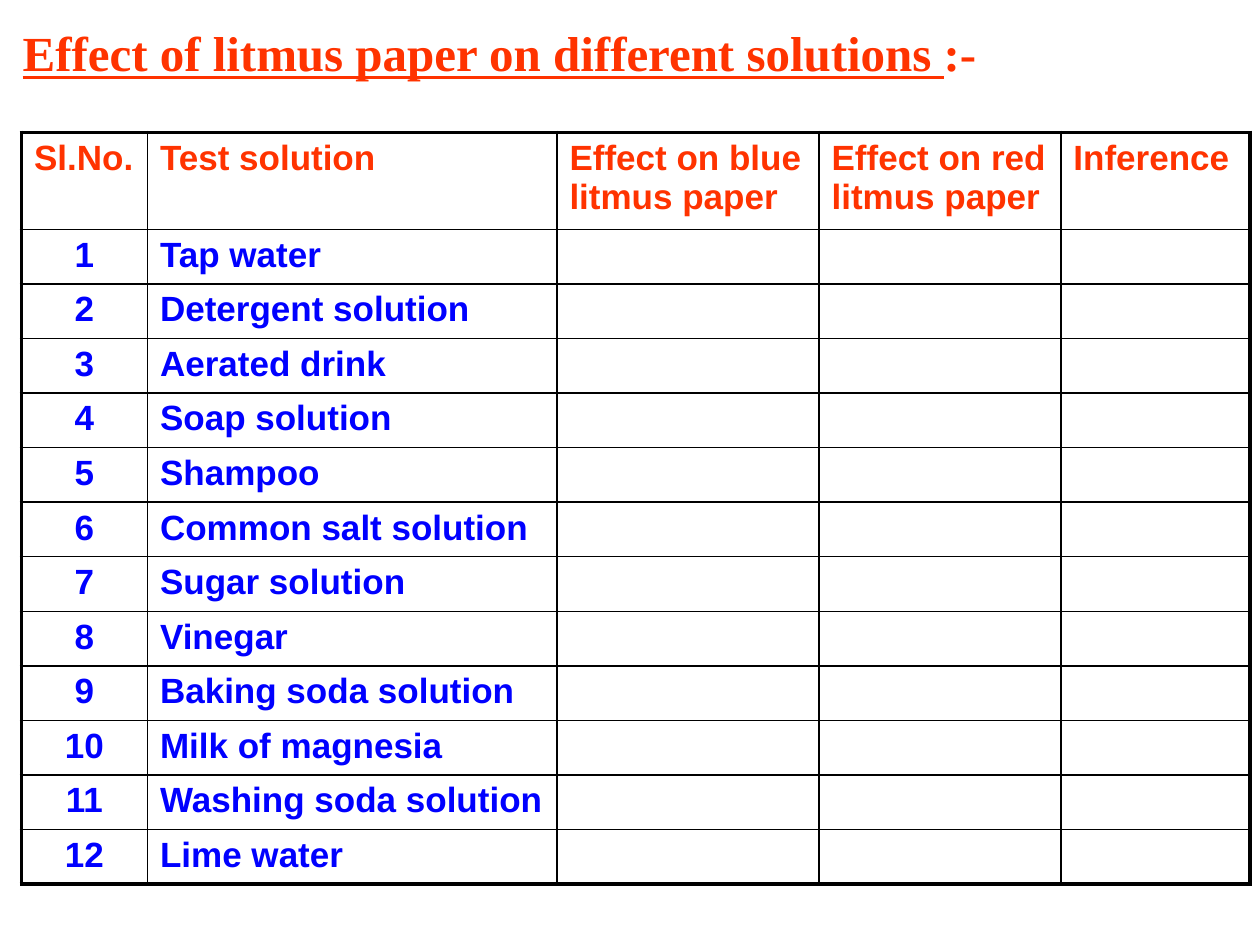
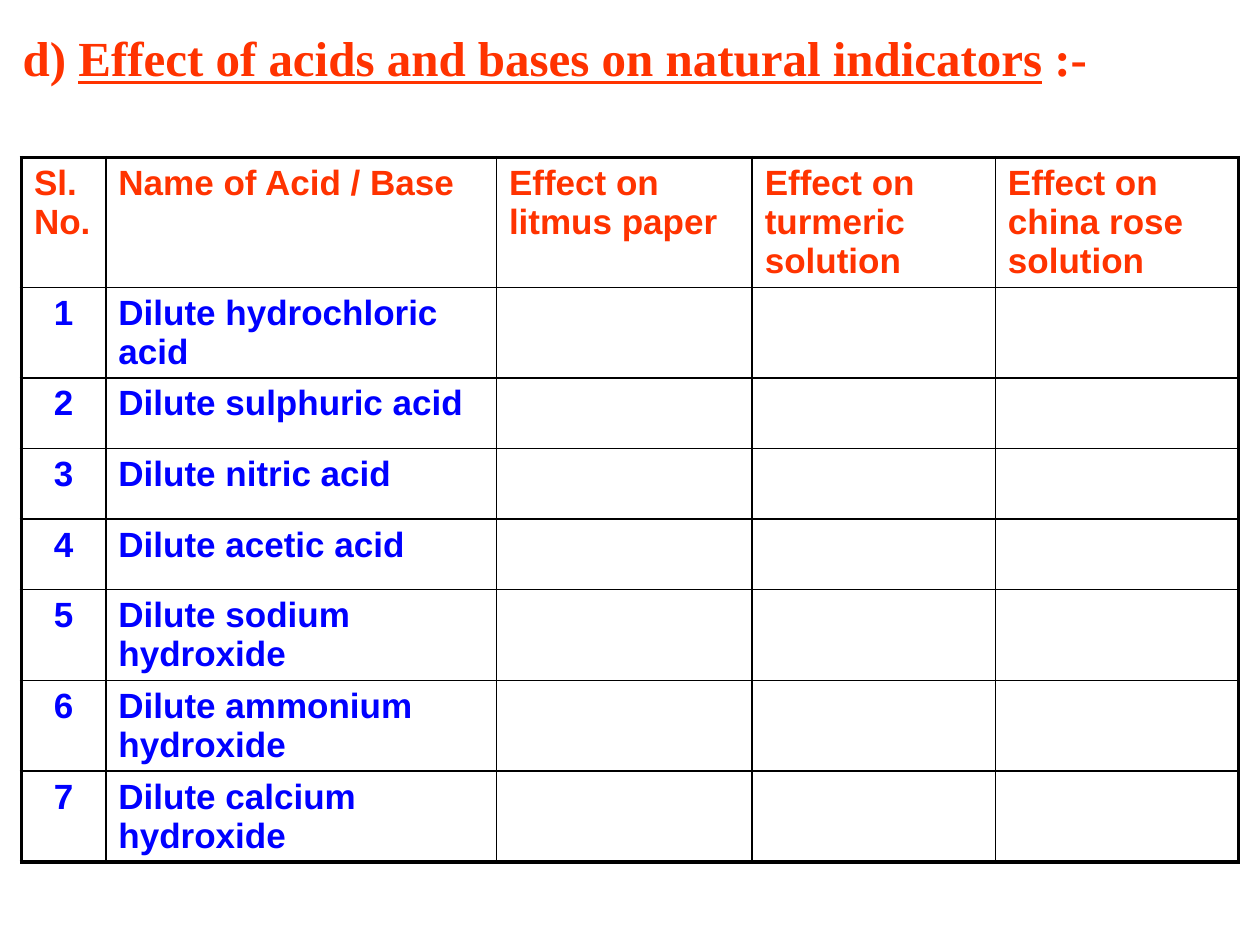
"""Build two worksheet slides, each a title over a ruled table to fill in."""
from lxml.etree import SubElement
from pptx import Presentation
from pptx.dml.color import RGBColor as RGB
from pptx.enum.text import MSO_ANCHOR as ANCHOR, MSO_AUTO_SIZE as AUTO, PP_ALIGN as ALIGN
from pptx.oxml import parse_xml
from pptx.oxml.ns import nsdecls, qn
from pptx.util import Pt

PX = 9144
HUES = {"head": "FF3300", "body": "0000FF", "rule": "000000"}
THICK, THIN = 2.25, 1


def style(run, font, size, hue):
    run.font.name, run.font.size, run.font.bold = font, Pt(size), True
    run.font.color.rgb = RGB.from_string(HUES[hue])


def rule(cell, sides):
    props = cell._tc.get_or_add_tcPr()
    for at, (side, width) in enumerate(sides.items()):
        line = parse_xml(f'<a:ln{side} {nsdecls("a")} w="{Pt(width)}"><a:solidFill>'
                         f'<a:srgbClr val="{HUES["rule"]}"/></a:solidFill></a:ln{side}>')
        props.insert(at, line)


pages = [
    {
        "title": [("Effect of litmus paper on different solutions ", True), (":-", False)],
        "box": (8, 8, 967, 67),
        "top": 105, "tall": 597, "first": 77, "rest": 520 / 12,
        "cols": [100, 325, 208, 192, 150],
        "heads": ["Sl.No.", "Test solution", "Effect on blue litmus paper",
                  "Effect on red litmus paper", "Inference"],
        "names": ["Tap water", "Detergent solution", "Aerated drink", "Soap solution",
                  "Shampoo", "Common salt solution", "Sugar solution", "Vinegar",
                  "Baking soda solution", "Milk of magnesia", "Washing soda solution",
                  "Lime water"],
    },
    {
        "title": [("d) ", False), ("Effect of acids and bases on natural indicators", True),
                  (" :-", False)],
        "box": (8, 8, 975, 75),
        "top": 125, "tall": 584, "first": 56, "rest": 56,
        "cols": [67, 310, 203, 193, 193],
        "heads": ["Sl. No.", "Name of Acid / Base", "Effect on litmus paper",
                  "Effect on turmeric solution", "Effect on china rose solution"],
        "names": [f"Dilute {name}" for name in (
            "hydrochloric acid", "sulphuric acid", "nitric acid", "acetic acid",
            "sodium hydroxide", "ammonium hydroxide", "calcium hydroxide")],
    },
]

deck = Presentation()
deck.slide_width, deck.slide_height = 1000 * PX, 750 * PX

for page in pages:
    slide = deck.slides.add_slide(deck.slide_layouts[0])
    sub = slide.placeholders[1].element
    sub.getparent().remove(sub)

    title = slide.shapes.title
    title.left, title.top, title.width, title.height = [n * PX for n in page["box"]]
    frame = title.text_frame
    frame.auto_size, frame.vertical_anchor = AUTO.NONE, ANCHOR.MIDDLE
    para = frame.paragraphs[0]
    para.alignment = ALIGN.LEFT
    for text, under in page["title"]:
        run = para.add_run()
        run.text = text
        style(run, "Times New Roman", 28, "head")
        run.font.underline = under

    rows = [page["heads"]] + [[str(n), name, "", "", ""]
                              for n, name in enumerate(page["names"], 1)]
    last, end = len(rows) - 1, len(page["cols"]) - 1
    holder = slide.shapes.add_table(len(rows), len(page["cols"]), 17 * PX, page["top"] * PX,
                                    sum(page["cols"]) * PX, page["tall"] * PX)
    table = holder.table
    table.first_row = table.horz_banding = False
    for col, width in zip(table.columns, page["cols"]):
        col.width = width * PX

    for r, row in enumerate(rows):
        table.rows[r].height = round((page["rest"] if r else page["first"]) * PX)
        for c, text in enumerate(row):
            cell = table.cell(r, c)
            cell.fill.background()
            rule(cell, {"L": THIN if c else THICK, "R": THICK if c == end else THIN,
                        "T": THIN if r else THICK, "B": THICK if r == last else THIN})
            if not text:
                continue
            cell.text_frame.text = text
            para = cell.text_frame.paragraphs[0]
            para.alignment = ALIGN.CENTER if r and c == 0 else ALIGN.LEFT
            gap = SubElement(para._p.get_or_add_pPr(), qn("a:spcBef"))
            SubElement(gap, qn("a:spcPct")).set("val", "20000")
            style(para.runs[0], "Arial", 20, "body" if r else "head")
    holder.height = page["tall"] * PX

deck.save("out.pptx")
